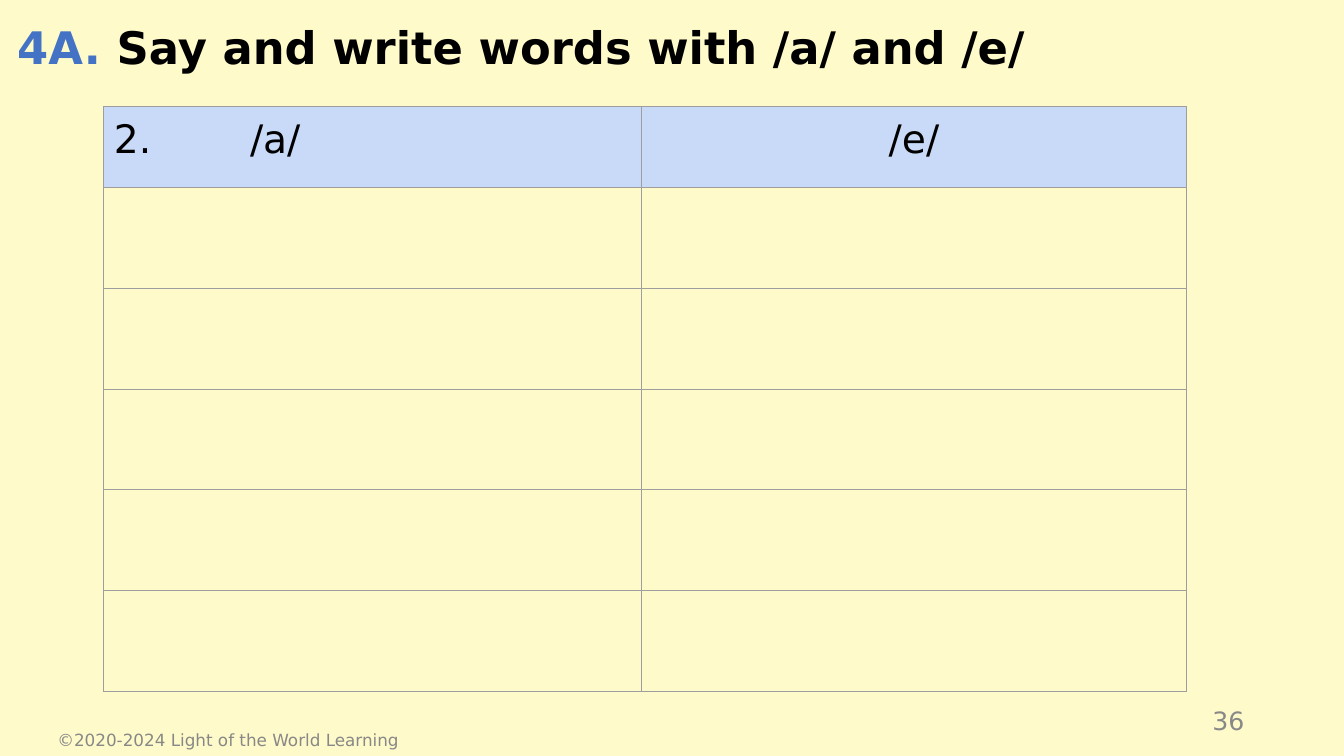
import dataclasses

import lxml.etree
import pptx
import pptx.dml.color
import pptx.enum.text
import pptx.oxml.ns
import pptx.util

Inches = pptx.util.Inches
Align = pptx.enum.text.PP_ALIGN
Anchor = pptx.enum.text.MSO_ANCHOR


@dataclasses.dataclass(frozen=True)
class Theme:
    font: str = "DejaVu Sans"
    background: str = "FEFAC9"
    accent: str = "4472C4"
    text: str = "000000"
    muted: str = "888888"
    header_fill: str = "C9DAF8"
    border: str = "9E9E9E"
    border_width: float = 0.75
    title_size: int = 32
    header_size: int = 28
    number_size: int = 18
    footer_size: int = 12


THEME = Theme()


def rgb(color):
    return pptx.dml.color.RGBColor.from_string(color)


def add_run(paragraph, text, size, color, bold=False):
    run = paragraph.add_run()
    run.text = text
    run.font.name = THEME.font
    run.font.size = pptx.util.Pt(size)
    run.font.bold = bold
    run.font.color.rgb = rgb(color)


def add_element(parent, tag, **attributes):
    return lxml.etree.SubElement(parent, pptx.oxml.ns.qn(tag), attributes)


def add_title(slide, number, text):
    title = slide.shapes.title
    title.left, title.top = Inches(0.07), Inches(0.15)
    title.width, title.height = Inches(13.26), Inches(1.52)
    frame = title.text_frame
    frame.auto_size = pptx.enum.text.MSO_AUTO_SIZE.NONE
    frame.vertical_anchor = Anchor.TOP
    paragraph = frame.paragraphs[0]
    paragraph.alignment = Align.LEFT
    add_run(paragraph, number + " ", THEME.title_size, THEME.accent, bold=True)
    add_run(paragraph, text, THEME.title_size, THEME.text, bold=True)


def add_label(slide, text, left, top, width, size, alignment):
    box = slide.shapes.add_textbox(Inches(left), Inches(top), Inches(width), Inches(0.4))
    frame = box.text_frame
    frame.word_wrap = True
    frame.vertical_anchor = Anchor.MIDDLE
    paragraph = frame.paragraphs[0]
    paragraph.alignment = alignment
    add_run(paragraph, text, size, THEME.muted)


def add_borders(cell):
    properties = cell._tc.get_or_add_tcPr()
    width = str(pptx.util.Pt(THEME.border_width))
    for side in ("a:lnL", "a:lnR", "a:lnT", "a:lnB"):
        line = add_element(properties, side, w=width)
        add_element(add_element(line, "a:solidFill"), "a:srgbClr", val=THEME.border)


def add_header(cell, text, alignment, tab=None):
    cell.fill.solid()
    cell.fill.fore_color.rgb = rgb(THEME.header_fill)
    paragraph = cell.text_frame.paragraphs[0]
    paragraph.alignment = alignment
    if tab:
        stops = add_element(paragraph._p.get_or_add_pPr(), "a:tabLst")
        add_element(stops, "a:tab", pos=str(Inches(tab)), algn="l")
    add_run(paragraph, text, THEME.header_size, THEME.text)


def add_word_table(slide):
    column_widths = (5.33, 5.41)
    row_heights = [0.8] + [1.0] * 5
    frame = slide.shapes.add_table(
        len(row_heights), len(column_widths), Inches(1.03), Inches(1.06),
        Inches(sum(column_widths)), Inches(sum(row_heights)))
    table = frame.table
    table.first_row = table.horz_banding = False
    for column, width in zip(table.columns, column_widths):
        column.width = Inches(width)
    for row, height in zip(table.rows, row_heights):
        row.height = Inches(height)
    for cell in table.iter_cells():
        cell.margin_left = cell.margin_right = Inches(0.1)
        cell.margin_top = cell.margin_bottom = Inches(0.1)
        add_borders(cell)
        cell.fill.background()
    add_header(table.cell(0, 0), "2.\t/a/", Align.LEFT, tab=1.35)
    add_header(table.cell(0, 1), "/e/", Align.CENTER)


def main():
    presentation = pptx.Presentation()
    presentation.slide_width, presentation.slide_height = Inches(13.33), Inches(7.5)
    slide = presentation.slides.add_slide(presentation.slide_layouts.get_by_name("Title Only"))
    slide.background.fill.solid()
    slide.background.fill.fore_color.rgb = rgb(THEME.background)

    # Heading and exercise table
    add_title(slide, "4A.", "Say and write words with /a/ and /e/")
    add_word_table(slide)

    # Page number and copyright line
    add_label(slide, "36", 9.44, 6.95, 3, THEME.number_size, Align.RIGHT)
    add_label(slide, "©2020-2024 Light of the World Learning", 0.47, 7.14, 4.5,
              THEME.footer_size, Align.LEFT)

    presentation.save("out.pptx")


if __name__ == "__main__":
    main()
